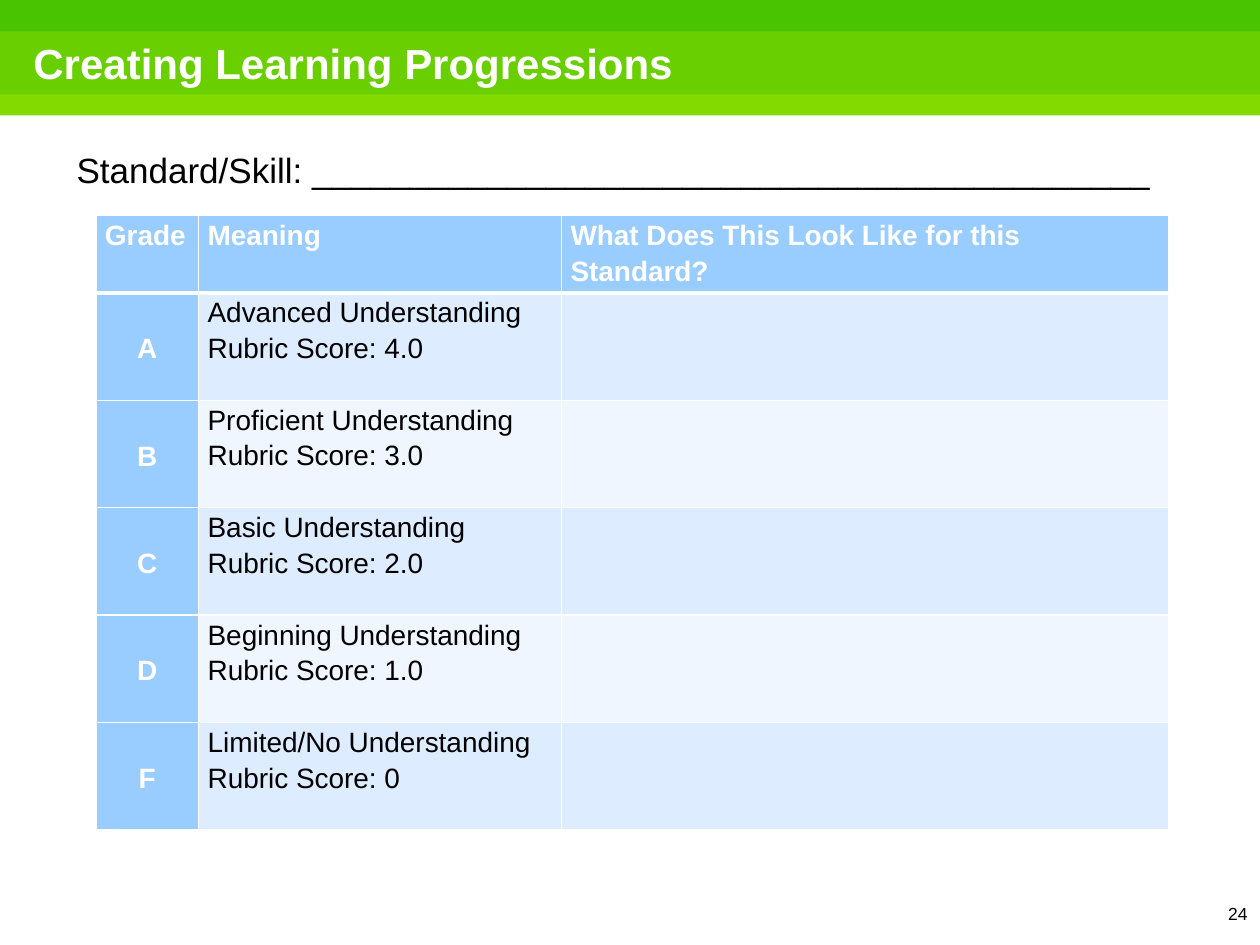
from lxml import etree
from pptx import Presentation, util as u
from pptx.dml.color import RGBColor
from pptx.enum import shapes, text
from pptx.oxml.ns import qn

Pt = u.Pt
WHITE = RGBColor(0xFF, 0xFF, 0xFF)
BLACK = RGBColor(0, 0, 0)
LIME = RGBColor(0x83, 0xDA, 0x00)
GREEN = RGBColor(0x69, 0xCF, 0x00)
DARK_GREEN = RGBColor(0x48, 0xC4, 0x00)
BLUE = RGBColor(0x99, 0xCC, 0xFF)
BAND_DARK = RGBColor(0xDE, 0xEC, 0xFF)
BAND_LIGHT = RGBColor(0xEF, 0xF6, 0xFF)

deck = Presentation()
deck.slide_width, deck.slide_height = Pt(720), Pt(540)
page = deck.slides.add_slide(deck.slide_layouts[6])


def write(frame, lines, size, color, bold=False, align=text.PP_ALIGN.LEFT, spacing=None):
    for index, line in enumerate(lines):
        para = frame.add_paragraph() if index else frame.paragraphs[0]
        para.text = line
        para.alignment = align
        para.line_spacing = spacing
        para.font.name, para.font.size = "Arial", Pt(size)
        para.font.bold, para.font.color.rgb = bold, color


def set_border(cell, side, width):
    line = etree.SubElement(cell._tc.get_or_add_tcPr(), qn("a:ln" + side), w=str(Pt(width)))
    fill = etree.SubElement(line, qn("a:solidFill"))
    etree.SubElement(fill, qn("a:srgbClr"), val=str(WHITE))


# Header bands, each shorter than the one behind it
for height, color in ((66, LIME), (54, GREEN), (18, DARK_GREEN)):
    band = page.shapes.add_shape(shapes.MSO_SHAPE.RECTANGLE, 0, 0, Pt(720), Pt(height))
    band.shadow.inherit = False
    band.fill.solid()
    band.fill.fore_color.rgb = color
    band.line.fill.background()

# Title, skill line and slide number
MIDDLE, TOP = text.MSO_ANCHOR.MIDDLE, text.MSO_ANCHOR.TOP
LEFT, RIGHT = text.PP_ALIGN.LEFT, text.PP_ALIGN.RIGHT
for place, words, size, color, bold, align, anchor in (
    ((12, 12, 696, 48), "Creating Learning Progressions", 24, WHITE, True, LEFT, MIDDLE),
    ((36.7, 80.6, 634, 33), "Standard/Skill: " + "_" * 43, 20, BLACK, False, LEFT, MIDDLE),
    ((570, 512.6, 150, 27), "24", 10, BLACK, False, RIGHT, TOP),
):
    box = page.shapes.add_textbox(*map(Pt, place))
    box.text_frame.word_wrap = True
    box.text_frame.vertical_anchor = anchor
    write(box.text_frame, [words], size, color, bold, align)

# Rubric table
levels = (
    ("A", "Advanced Understanding", "4.0"),
    ("B", "Proficient Understanding", "3.0"),
    ("C", "Basic Understanding", "2.0"),
    ("D", "Beginning Understanding", "1.0"),
    ("F", "Limited/No Understanding", "0"),
)
rows = [[["Grade"], ["Meaning"], ["What Does This Look Like for this Standard?"]]]
rows += [[[grade], [meaning, f"Rubric Score: {score}"], []] for grade, meaning, score in levels]
widths = (58.7, 207.4, 346.8)
heights = [40] + [61.4] * len(levels)
table = page.shapes.add_table(
    len(rows), len(widths), Pt(54.8), Pt(123.2), Pt(sum(widths)), Pt(sum(heights))
).table
for column, width in zip(table.columns, widths):
    column.width = Pt(width)
for row, height in zip(table.rows, heights):
    row.height = Pt(height)

for r, row in enumerate(rows):
    for c, lines in enumerate(row):
        cell = table.cell(r, c)
        heading = r == 0 or c == 0
        grade = r > 0 and c == 0
        cell.margin_left = cell.margin_right = Pt(5.2)
        cell.margin_top = cell.margin_bottom = 0
        cell.vertical_anchor = MIDDLE if grade else TOP
        for side in "LRTB":
            header_rule = (r, side) in ((0, "B"), (1, "T"))
            set_border(cell, side, 3 if header_rule else 1)
        cell.fill.solid()
        cell.fill.fore_color.rgb = BLUE if heading else BAND_DARK if r % 2 else BAND_LIGHT
        write(cell.text_frame, lines, 16, WHITE if heading else BLACK, heading,
              text.PP_ALIGN.CENTER if grade else LEFT, 1.15)

deck.save("out.pptx")
